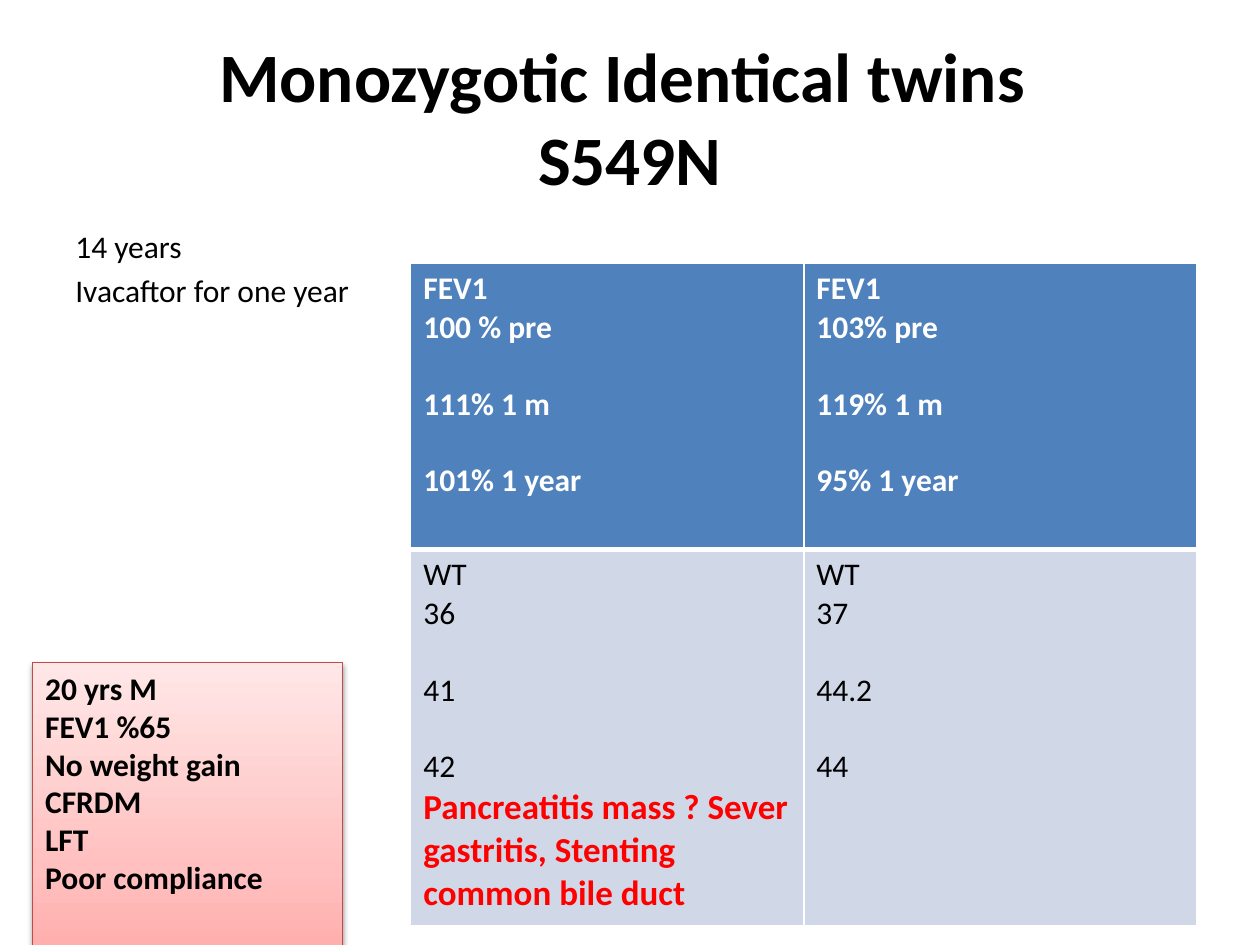
from lxml import etree
from pptx import Presentation
from pptx.dml.color import RGBColor
from pptx.enum.shapes import MSO_SHAPE
from pptx.enum.text import MSO_ANCHOR, MSO_AUTO_SIZE, PP_ALIGN
from pptx.oxml import parse_xml
from pptx.oxml.ns import nsdecls, qn
from pptx.util import Inches, Pt

BLACK = RGBColor(0x00, 0x00, 0x00)
WHITE = RGBColor(0xFF, 0xFF, 0xFF)
RED = RGBColor(0xFF, 0x00, 0x00)
BRICK = RGBColor(0xBF, 0x4C, 0x48)
HEADER_BLUE = RGBColor(0x4F, 0x81, 0xBD)
BAND_BLUE = RGBColor(0xD0, 0xD8, 0xE8)
PINK_STOPS = [(0, "FFA6A5"), (35, "FFC0BF"), (100, "FFE7E7")]

FONT = "Calibri"
BODY = 18
LINE = Pt(22)  # one line of body text

FINDING = "Pancreatitis mass ? Sever gastritis, Stenting common bile duct"
# Each cell holds groups of lines, set one line apart
HEADER_CELLS = [
    [["FEV1", "100 % pre"], ["111% 1 m"], ["101% 1 year"]],
    [["FEV1", "103% pre"], ["119% 1 m"], ["95% 1 year"]],
]
WEIGHT_CELLS = [
    [["WT", "36"], ["41"], ["42", FINDING]],
    [["WT", "37"], ["44.2"], ["44"]],
]
PATIENT = ["20 yrs M", "FEV1 %65", "No weight gain", "CFRDM", "LFT",
           "Poor compliance"]


class SlideBuilder:
    def __init__(self, slide):
        self.s = slide

    def style(self, p, size=BODY, color=BLACK, bold=False):
        for r in p.runs:
            r.font.name = FONT
            r.font.size = Pt(size)
            r.font.bold = bold
            r.font.color.rgb = color

    def lines(self, tf, lines, before=0, **style):
        tf.word_wrap = True
        tf.text = "\n".join(lines)
        for p in tf.paragraphs:
            p.alignment = PP_ALIGN.LEFT
            p.space_before = Pt(before)
            self.style(p, **style)

    def title(self, text, x, y, w, h):
        sp = self.s.shapes.title
        sp.left, sp.top, sp.width, sp.height = map(Inches, (x, y, w, h))
        tf = sp.text_frame
        tf.text = text
        tf.auto_size = MSO_AUTO_SIZE.NONE
        tf.vertical_anchor = MSO_ANCHOR.MIDDLE
        p = tf.paragraphs[0]
        p.alignment = PP_ALIGN.CENTER
        self.style(p, size=39.6, bold=True)

    def text(self, lines, x, y, w, h, **style):
        sp = self.s.shapes.add_textbox(*map(Inches, (x, y, w, h)))
        self.lines(sp.text_frame, lines, **style)

    def gradient_box(self, lines, stops, x, y, w, h, **style):
        sp = self.s.shapes.add_shape(MSO_SHAPE.RECTANGLE,
                                     *map(Inches, (x, y, w, h)))
        sp.line.color.rgb = BRICK
        sp.line.width = Pt(0.75)
        gs = "".join(f'<a:gs pos="{pos * 1000}"><a:srgbClr val="{color}"/></a:gs>'
                     for pos, color in stops)
        ln = sp._element.spPr.find(qn("a:ln"))
        ln.addprevious(parse_xml(
            f'<a:gradFill {nsdecls("a")} rotWithShape="1"><a:gsLst>{gs}</a:gsLst>'
            '<a:lin ang="16200000" scaled="0"/></a:gradFill>'))
        ln.addnext(parse_xml(
            f'<a:effectLst {nsdecls("a")}>'
            '<a:outerShdw blurRad="40000" dist="20000" dir="5400000" rotWithShape="0">'
            '<a:srgbClr val="000000"><a:alpha val="38000"/></a:srgbClr>'
            '</a:outerShdw></a:effectLst>'))
        sp.text_frame.vertical_anchor = MSO_ANCHOR.TOP
        self.lines(sp.text_frame, lines, **style)

    def borders(self, cell, **widths):
        tcPr = cell._tc.get_or_add_tcPr()
        for i, side in enumerate(("lnL", "lnR", "lnT", "lnB")):
            ln = etree.Element(qn(f"a:{side}"), w=str(Pt(widths.get(side, 1))))
            fill = etree.SubElement(ln, qn("a:solidFill"))
            etree.SubElement(fill, qn("a:srgbClr"), val=str(WHITE))
            tcPr.insert(i, ln)

    def cell(self, cell, groups, fill, **style):
        cell.fill.solid()
        cell.fill.fore_color.rgb = fill
        self.lines(cell.text_frame, [t for g in groups for t in g], **style)
        start = 0
        for group in groups[:-1]:
            start += len(group)
            cell.text_frame.paragraphs[start].space_before = LINE

    def table(self, x, y, col_width, row_heights):
        """Add the FEV1 header row and the weight row, one column per twin."""
        table = self.s.shapes.add_table(
            2, 2, Inches(x), Inches(y),
            Inches(2 * col_width), Inches(sum(row_heights))).table
        for row, height in zip(table.rows, row_heights):
            row.height = Inches(height)
        for c in range(2):
            table.columns[c].width = Inches(col_width)
            head, weight = table.cell(0, c), table.cell(1, c)
            self.cell(head, HEADER_CELLS[c], HEADER_BLUE, color=WHITE, bold=True)
            self.cell(weight, WEIGHT_CELLS[c], BAND_BLUE)
            self.borders(head, lnB=3)
            self.borders(weight, lnT=3)
        finding = table.cell(1, 0).text_frame.paragraphs[-1]
        self.style(finding, size=20, color=RED, bold=True)


def main():
    prs = Presentation()
    prs.slide_width, prs.slide_height = Inches(10), Inches(7.5)
    b = SlideBuilder(prs.slides.add_slide(prs.slide_layouts[5]))
    b.title("Monozygotic Identical twins \vS549N", 0.5, 0.3, 9, 1.25)
    b.text(["14 years", "Ivacaftor for one year"], 0.5, 1.75, 9, 4.95, before=3.6)
    b.gradient_box(PATIENT, PINK_STOPS, 0.26, 5.26, 2.46, 2.52, bold=True)
    b.table(3.26, 2.09, 3.12, [2.27, 2.99])
    prs.save("out.pptx")


if __name__ == "__main__":
    main()
